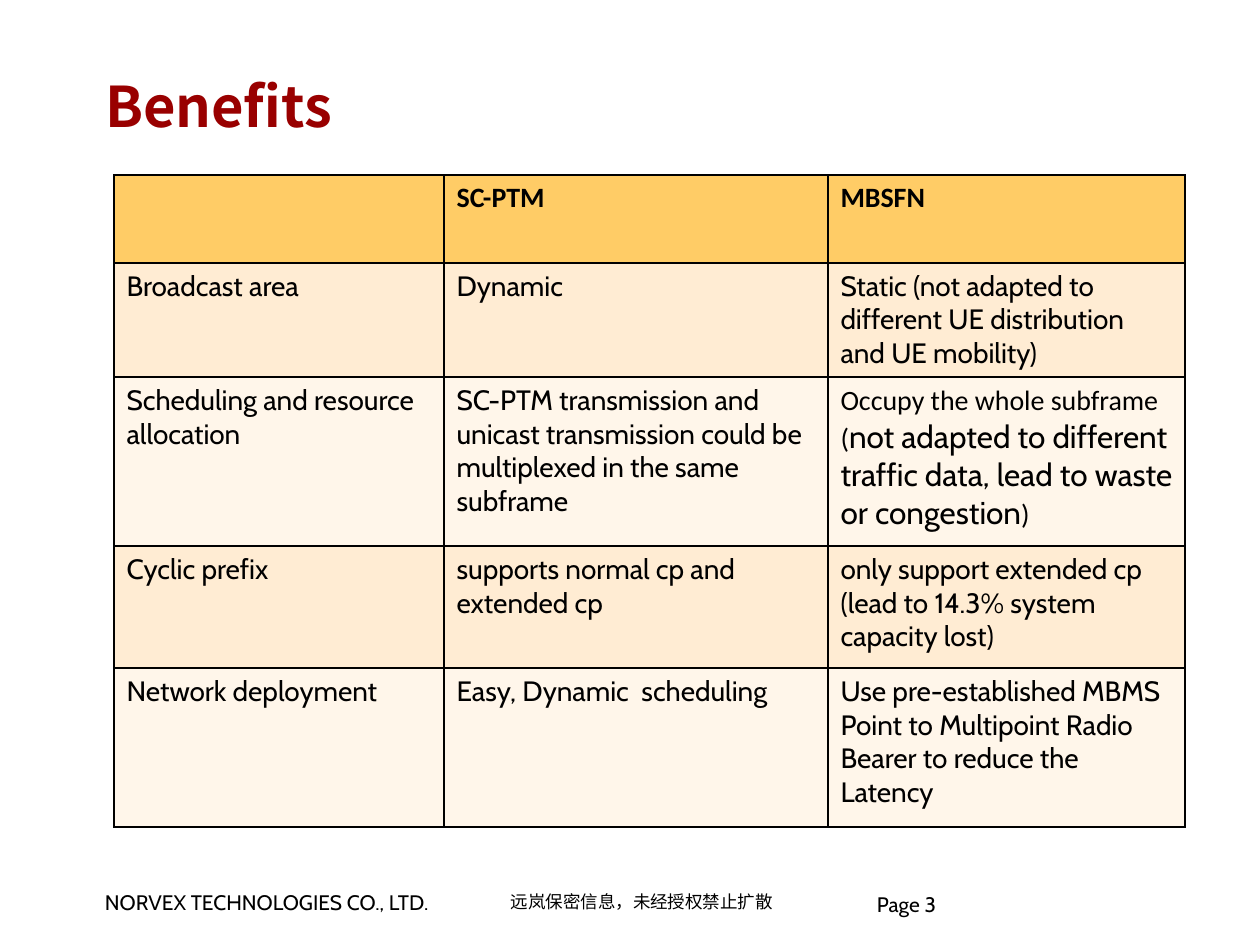
"""Build the Benefits slide comparing SC-PTM with MBSFN."""
from lxml import etree
from pptx import Presentation
from pptx.dml.color import RGBColor
from pptx.enum.text import MSO_ANCHOR, MSO_AUTO_SIZE, PP_ALIGN
from pptx.oxml.ns import qn
from pptx.util import Pt

PX = 914400 / 126
LEFT, MIDDLE = PP_ALIGN.LEFT, MSO_ANCHOR.MIDDLE
NO_FIT = MSO_AUTO_SIZE.NONE

BLACK = RGBColor(0, 0, 0)
DARK_RED = RGBColor(0x99, 0, 0)
HEADER_FILL = RGBColor(0xFF, 0xCC, 0x66)
BAND_FILLS = [RGBColor(0xFF, 0xF6, 0xEA), RGBColor(0xFF, 0xEC, 0xD3)]

ROWS = [
    ["", "SC-PTM", "MBSFN"],
    ["Broadcast area", "Dynamic",
     "Static (not adapted to different UE distribution and UE mobility)"],
    ["Scheduling and resource allocation",
     "SC-PTM transmission and unicast transmission could be multiplexed in the same subframe",
     [("Occupy the whole subframe (", "Calibri", 16),
      ("not adapted to different traffic data, lead to waste or congestion", "Cabin", 18),
      (")", "Calibri", 16)]],
    ["Cyclic prefix", "supports normal cp and extended cp",
     "only support extended cp (lead to 14.3% system capacity lost)"],
    ["Network deployment", "Easy, Dynamic  scheduling",
     "Use pre-established MBMS Point to Multipoint Radio Bearer to reduce the Latency"],
]
COLUMN_WIDTHS = [330, 384, 357]
ROW_HEIGHTS = [88, 114, 169, 122, 159]
TABLE_LEFT, TABLE_TOP = 114, 175

FOOTERS = [
    ("NORVEX TECHNOLOGIES CO., LTD.", (105, 890, 350, 25), "Cabin", 12, 0, 1),
    ("远岚保密信息，未经授权禁止扩散", (500, 891, 287, 21), "Arial", 10, 11, 1),
    ("Page 3", (877, 895, 289, 63), "Cabin", 12, 0, 0.85),
]


def px(length):
    return round(length * PX)


def style(font, name, size, color=BLACK, bold=False):
    font.name, font.size, font.bold = name, Pt(size), bold
    font.color.rgb = color


def set_margins(frame, left, top, right, bottom):
    frame.margin_left, frame.margin_top = px(left), px(top)
    frame.margin_right, frame.margin_bottom = px(right), px(bottom)


def add_borders(cell):
    properties = cell._tc.get_or_add_tcPr()
    for side in ("a:lnL", "a:lnR", "a:lnT", "a:lnB"):
        line = etree.SubElement(properties, qn(side), w=str(Pt(1)))
        fill = etree.SubElement(line, qn("a:solidFill"))
        etree.SubElement(fill, qn("a:srgbClr"), val=str(BLACK))


def fill_cell(cell, content, row):
    add_borders(cell)
    cell.fill.solid()
    cell.fill.fore_color.rgb = BAND_FILLS[row % 2] if row else HEADER_FILL
    para = cell.text_frame.paragraphs[0]
    if isinstance(content, str):
        para.text = content
        style(para.font, "Cabin" if row else "Calibri", 16, bold=row == 0)
        return
    for text, name, size in content:
        span = para.add_run()
        span.text = text
        style(span.font, name, size)


def add_title(page):
    title = page.shapes.title
    title.left, title.top, title.width, title.height = map(px, (105, 45, 1052, 120))
    frame = title.text_frame
    frame.text = "Benefits"
    frame.auto_size, frame.vertical_anchor = NO_FIT, MIDDLE
    set_margins(frame, 0, 5, 11, 5)
    para = frame.paragraphs[0]
    para.alignment = LEFT
    style(para.font, "Noto Sans CJK SC", 32, DARK_RED, True)


def add_comparison(page):
    table = page.shapes.add_table(
        len(ROWS), len(COLUMN_WIDTHS), px(TABLE_LEFT), px(TABLE_TOP),
        px(sum(COLUMN_WIDTHS)), px(sum(ROW_HEIGHTS))).table
    for column, width in zip(table.columns, COLUMN_WIDTHS):
        column.width = px(width)
    for index, (contents, height) in enumerate(zip(ROWS, ROW_HEIGHTS)):
        table.rows[index].height = px(height)
        for cell, content in zip(table.rows[index].cells, contents):
            fill_cell(cell, content, index)


def add_footers(page):
    for text, place, name, size, inset, spacing in FOOTERS:
        box = page.shapes.add_textbox(*map(px, place))
        frame = box.text_frame
        frame.word_wrap = True
        set_margins(frame, inset, 0, 0, 0)
        para = frame.paragraphs[0]
        para.text = text
        para.line_spacing = spacing
        style(para.font, name, size)


def main():
    deck = Presentation()
    deck.slide_width, deck.slide_height = px(1260), px(945)
    page = deck.slides.add_slide(deck.slide_layouts[5])
    add_title(page)
    add_comparison(page)
    add_footers(page)
    deck.save("out.pptx")


if __name__ == "__main__":
    main()
